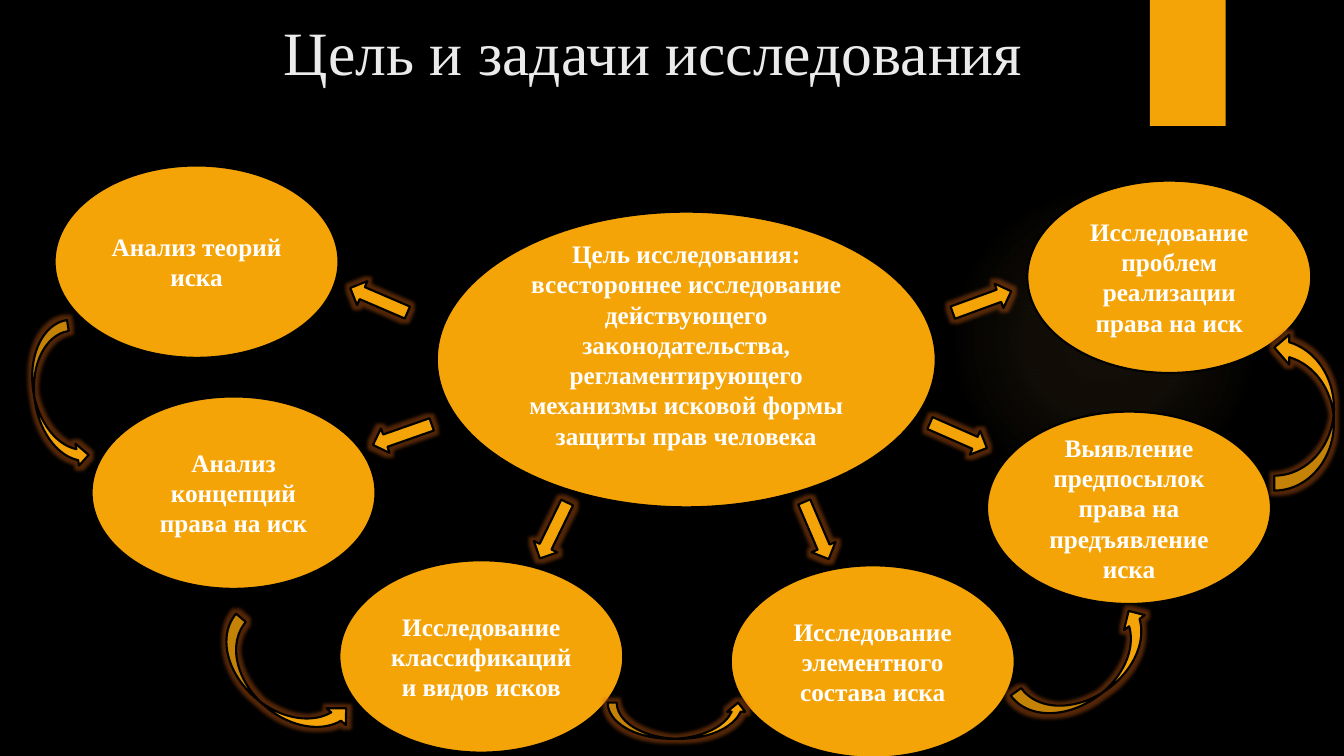
from dataclasses import dataclass

import pptx
import pptx.dml.color
import pptx.enum.shapes
import pptx.enum.text
import pptx.oxml
import pptx.oxml.ns
import pptx.util

Shape = pptx.enum.shapes.MSO_SHAPE
Align = pptx.enum.text.PP_ALIGN
Anchor = pptx.enum.text.MSO_ANCHOR
qn = pptx.oxml.ns.qn

COLS, ROWS = 160, 90
DRAWML = pptx.oxml.ns.nsdecls("a")


@dataclass(frozen=True)
class Theme:
    back: str = "000000"
    gold: str = "F5A408"
    pale: str = "FAC96A"
    glow: str = "D26012"
    head: str = "EBEBEB"
    text: str = "FFFFFF"
    font: str = "Times New Roman"
    big: float = 44
    body: float = 18
    line: float = 1.5
    halo: float = 5


@dataclass(frozen=True)
class Box:
    """Left, top, width and height in grid columns and rows, plus a turn in degrees."""
    col: float
    row: float
    wide: float
    high: float
    turn: float = 0


@dataclass(frozen=True)
class Bubble:
    box: Box
    text: str
    foot: float = 0.6


def task(col: float, row: float, text: str) -> Bubble:
    return Bubble(Box(col, row, 33.8, 22.9), text)


def ray(col: float, row: float, turn: float) -> Box:
    return Box(col, row, 7.4, 3.1, turn)


THEME = Theme()
TITLE = Box(32.6, 0, 123.5, 12)
TAB = Box(136.9, 0, 9, 15)
HALO = Box(112.9, 22, 37, 37)

BUBBLES = [
    Bubble(Box(52, 25.2, 59.4, 35.2),
           "Цель исследования: всестороннее исследование действующего "
           "законодательства, регламентирующего механизмы исковой формы "
           "защиты прав человека", foot=4.2),
    task(6.5, 19.7, "Анализ теорий иска"),
    task(10.9, 47.2, "Анализ концепций права на иск"),
    task(40.4, 66.7, "Исследование классификаций и видов исков"),
    task(117.5, 49, "Выявление предпосылок права на предъявление иска"),
    task(122.3, 21.5, "Исследование проблем реализации права на иск"),
    task(87, 67.3, "Исследование элементного состава иска"),
]
RAYS = [
    ray(93.5, 61.6, 246.8),
    ray(62.2, 61.6, 296),
    ray(44.2, 50.2, 340.7),
    ray(41.4, 34.2, 23.3),
    ray(110.4, 50.3, 203.7),
    ray(113.2, 34.4, 159.9),
]
BENDS = [
    Box(4.1, 38.4, 5.3, 17.6, 350.9),
    Box(126.7, 70.4, 6.1, 18.8, 234.3),
    Box(78.5, 77.5, 4.3, 16.6, 270),
    Box(30.2, 72.1, 6.1, 18.8, 310.7),
    Box(151.7, 39.6, 7.1, 18.8, 180),
]

deck = pptx.Presentation()
deck.slide_width = pptx.util.Inches(13.33)
deck.slide_height = pptx.util.Inches(7.5)
slide = deck.slides.add_slide(deck.slide_layouts[6])


def color(code: str) -> pptx.dml.color.RGBColor:
    return pptx.dml.color.RGBColor.from_string(code)


def down(rows: float) -> int:
    return round(deck.slide_height * rows / ROWS)


def place(box: Box) -> tuple[int, int, int, int]:
    unit = deck.slide_width / COLS
    return (round(box.col * unit), down(box.row),
            round(box.wide * unit), down(box.high))


def draw(kind: Shape, box: Box, edge: bool = True):
    shape = slide.shapes.add_shape(kind, *place(box))
    shape.rotation = box.turn
    shape.shadow.inherit = False
    shape.fill.solid()
    shape.fill.fore_color.rgb = color(THEME.gold)
    if edge:
        shape.line.color.rgb = color(THEME.back)
        shape.line.width = pptx.util.Pt(THEME.line)
    else:
        shape.line.fill.background()
    return shape


def write(shape, text: str, size: float, code: str, bold: bool, align: Align) -> None:
    frame = shape.text_frame
    frame.text = text
    frame.word_wrap = True
    frame.vertical_anchor = Anchor.MIDDLE
    for para in frame.paragraphs:
        para.alignment = align
        for run in para.runs:
            run.font.name = THEME.font
            run.font.size = pptx.util.Pt(size)
            run.font.bold = bold
            run.font.color.rgb = color(code)


def fade(shape) -> None:
    """Swap the solid fill for a faint round gradient."""
    stops = "".join(
        f'<a:gs pos="{pos * 1000}"><a:srgbClr val="{THEME.pale}">'
        f'<a:alpha val="{alpha * 1000}"/></a:srgbClr></a:gs>'
        for pos, alpha in ((0, 7), (36, 6), (69, 0)))
    grad = pptx.oxml.parse_xml(
        f'<a:gradFill {DRAWML}><a:gsLst>{stops}</a:gsLst><a:path path="circle">'
        '<a:fillToRect l="50000" t="50000" r="50000" b="50000"/></a:path></a:gradFill>')
    props = shape.element.spPr
    props.replace(props.find(qn("a:solidFill")), grad)


def shine(shape) -> None:
    """Add a soft glow around the outline."""
    shape.element.spPr.find(qn("a:effectLst")).append(pptx.oxml.parse_xml(
        f'<a:glow {DRAWML} rad="{pptx.util.Pt(THEME.halo)}">'
        f'<a:srgbClr val="{THEME.glow}"><a:alpha val="40000"/></a:srgbClr></a:glow>'))


def main() -> None:
    slide.background.fill.solid()
    slide.background.fill.fore_color.rgb = color(THEME.back)
    fade(draw(Shape.OVAL, HALO, edge=False))
    draw(Shape.RECTANGLE, TAB, edge=False)
    title = slide.shapes.add_textbox(*place(TITLE))
    write(title, "Цель и задачи исследования", THEME.big, THEME.head, False, Align.LEFT)
    for item in BUBBLES:
        oval = draw(Shape.OVAL, item.box)
        write(oval, item.text, THEME.body, THEME.text, True, Align.CENTER)
        oval.text_frame.margin_bottom = down(item.foot)
    for kind, boxes in ((Shape.LEFT_ARROW, RAYS), (Shape.CURVED_RIGHT_ARROW, BENDS)):
        for box in boxes:
            shine(draw(kind, box))
    deck.save("out.pptx")


if __name__ == "__main__":
    main()
